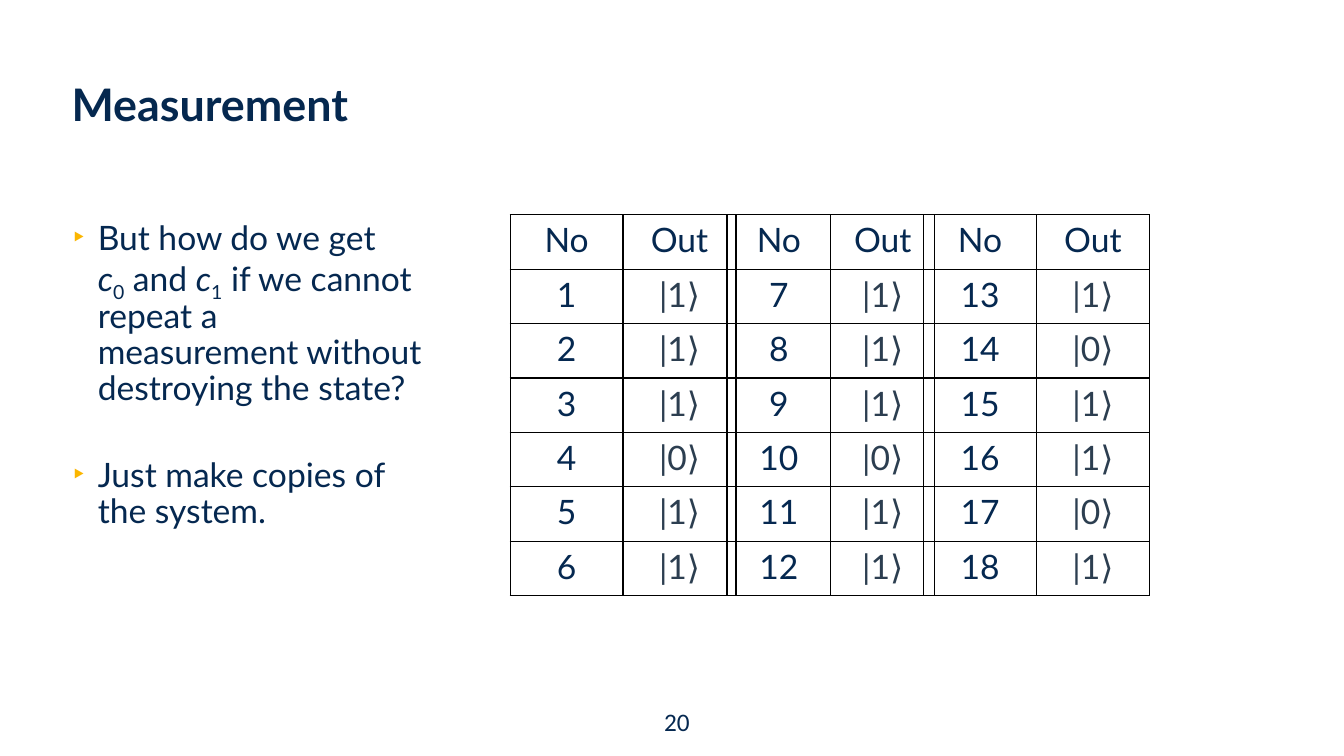
from lxml import etree
from pptx import Presentation
from pptx import util as u
from pptx.dml.color import RGBColor
from pptx.enum import text
from pptx.oxml.ns import qn

COLORS = {"title": "05284F", "text": "052850", "ket": "2C3E50",
          "bullet": "FBB600", "border": "000000"}
ZERO_OUTCOMES = {4, 10, 14, 17}
ROWS = 6
ROW_HEIGHT = 0.54


def add_text(p, content, size=24, color="text", font="Lato", bold=False,
             italic=False, sub=False):
    r = p.add_run()
    r.text = content
    f = r.font
    f.size, f.name, f.bold, f.italic = u.Pt(size), font, bold, italic
    f.color.rgb = RGBColor.from_string(COLORS[color])
    if sub:
        r._r.get_or_add_rPr().set("baseline", "-25000")


def add_lines(p, *lines):
    for i, line in enumerate(lines):
        if i:
            p.add_line_break()
        add_text(p, line)


def place(s, box):
    s.left, s.top, s.width, s.height = map(u.Inches, box)


def prepare_frame(s, anchor):
    """Clear margins and autofit, and return the text frame."""
    tf = s.text_frame
    tf.margin_left = tf.margin_right = tf.margin_top = tf.margin_bottom = 0
    tf.auto_size = text.MSO_AUTO_SIZE.NONE
    tf.vertical_anchor = anchor
    tf.word_wrap = True
    return tf


def format_bullet(p, before):
    pPr = p._p.get_or_add_pPr()
    pPr.set("marL", str(u.Inches(0.25)))
    pPr.set("indent", str(-u.Inches(0.25)))
    clr = etree.SubElement(pPr, qn("a:buClr"))
    etree.SubElement(clr, qn("a:srgbClr"), val=COLORS["bullet"])
    etree.SubElement(pPr, qn("a:buChar"), char="‣")
    p.line_spacing = 0.9
    p.space_before = u.Pt(before)


def add_title(slide, box):
    s = slide.shapes.title
    place(s, box)
    p = prepare_frame(s, text.MSO_ANCHOR.MIDDLE).paragraphs[0]
    p.alignment = text.PP_ALIGN.LEFT
    p.line_spacing = 0.9
    add_text(p, "Measurement", size=32, color="title", bold=True)


def add_body(slide, box):
    s = slide.placeholders[1]
    place(s, box)
    tf = prepare_frame(s, text.MSO_ANCHOR.TOP)
    p = tf.paragraphs[0]
    format_bullet(p, before=0)
    add_lines(p, "But how do we get", "")
    add_text(p, "c", italic=True)
    add_text(p, "0", sub=True)
    add_text(p, " and ")
    add_text(p, "c", italic=True)
    add_text(p, "1", sub=True)
    add_lines(p, " if we cannot", "repeat a", "measurement without",
              "destroying the state?")
    p = tf.add_paragraph()
    format_bullet(p, before=36)
    add_lines(p, "Just make copies of", "the system.")


def draw_borders(cell):
    tcPr = cell._tc.get_or_add_tcPr()
    for side in ("lnL", "lnR", "lnT", "lnB"):
        ln = etree.SubElement(tcPr, qn("a:" + side), w=str(u.Pt(1)))
        fill = etree.SubElement(ln, qn("a:solidFill"))
        etree.SubElement(fill, qn("a:srgbClr"), val=COLORS["border"])


def add_outcome_table(slide, box, first):
    """Table of ROWS measurements, numbered from first."""
    table = slide.shapes.add_table(ROWS + 1, 2, *map(u.Inches, box)).table
    table.first_row = table.horz_banding = False
    for column in table.columns:
        column.width = u.Inches(box[2] / 2)
    for row in table.rows:
        row.height = u.Inches(ROW_HEIGHT)
    numbers = range(first, first + ROWS)
    rows = [("No", "Out")]
    rows += [(str(n), "|0⟩" if n in ZERO_OUTCOMES else "|1⟩") for n in numbers]
    for i, values in enumerate(rows):
        for j, value in enumerate(values):
            cell = table.cell(i, j)
            draw_borders(cell)
            cell.fill.background()
            p = cell.text_frame.paragraphs[0]
            p.alignment = text.PP_ALIGN.CENTER
            add_text(p, value, color="ket" if i and j else "text")


def add_page_number(slide, box):
    s = slide.shapes.add_textbox(*map(u.Inches, box))
    s.text_frame.word_wrap = True
    p = s.text_frame.paragraphs[0]
    p.alignment = text.PP_ALIGN.CENTER
    add_text(p, "20", size=18, font="Calibri")


def main():
    prs = Presentation()
    prs.slide_width, prs.slide_height = u.Inches(13.33), u.Inches(7.5)
    slide = prs.slides.add_slide(prs.slide_layouts[1])
    add_title(slide, (0.71, 0.56, 8.61, 1.01))
    add_body(slide, (0.72, 2.2, 11.71, 4.63))
    for i, (left, width) in enumerate([(5.06, 2.24), (7.21, 2.06), (9.16, 2.24)]):
        add_outcome_table(slide, (left, 2.13, width, ROW_HEIGHT * (ROWS + 1)),
                          first=1 + i * ROWS)
    add_page_number(slide, (6.3, 6.96, 0.83, 0.4))
    prs.save("out.pptx")


if __name__ == "__main__":
    main()
